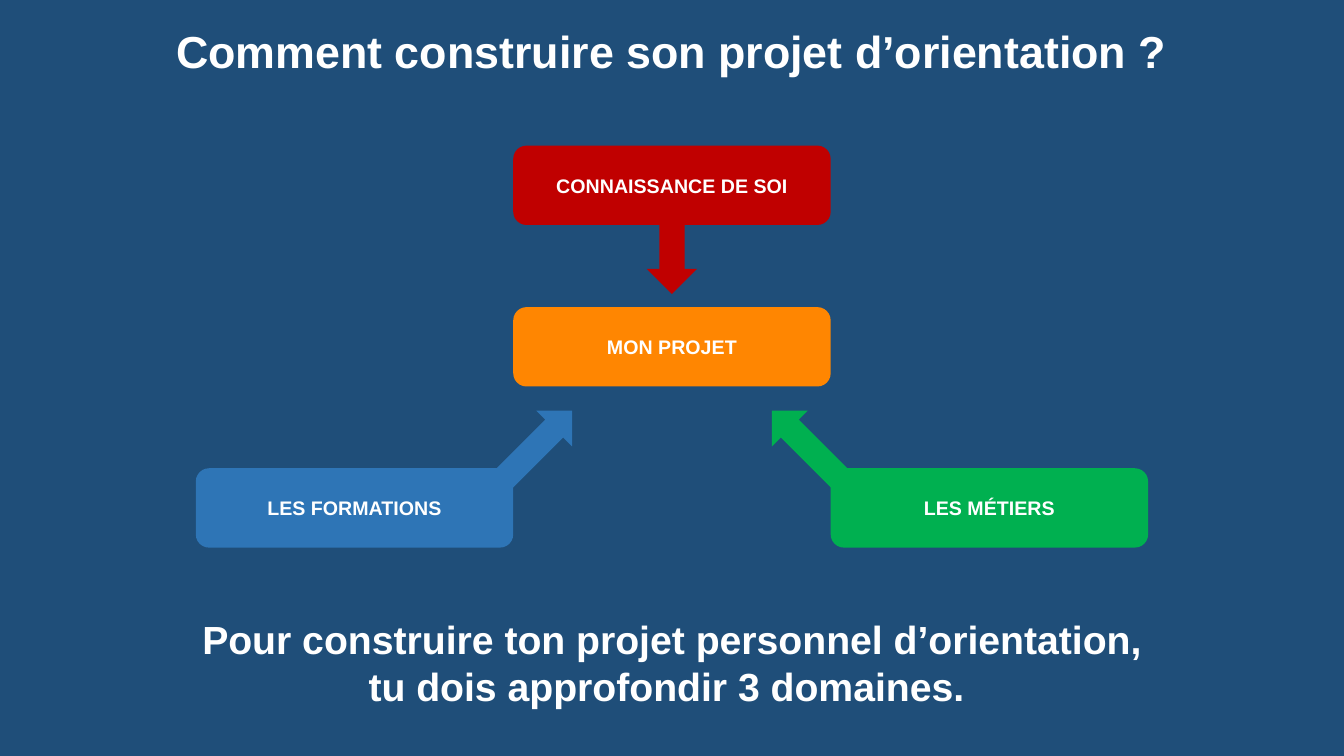
from dataclasses import dataclass

from pptx import Presentation
from pptx.dml.color import RGBColor as Rgb
from pptx.enum.shapes import MSO_SHAPE as Kind
from pptx.enum.text import MSO_ANCHOR as Anchor, MSO_AUTO_SIZE as Fit, PP_ALIGN as Align
from pptx.shapes.autoshape import Shape
from pptx.slide import Slide
from pptx.text.text import TextFrame
from pptx.util import Cm, Pt


@dataclass(frozen=True)
class Theme:
    font: str = "Arial"
    back: str = "1F4E79"
    text: str = "FFFFFF"
    red: str = "C00000"
    blue: str = "2E75B6"
    green: str = "00B050"
    gold: str = "FF8601"
    title: int = 32
    note: int = 28
    label: int = 14


@dataclass(frozen=True)
class Box:
    label: str
    mid: float
    top: float
    fill: str


@dataclass(frozen=True)
class Arrow:
    """A down arrow, placed by its centre and turned clockwise."""
    mid: float
    level: float
    length: float
    turn: int
    fill: str


@dataclass(frozen=True)
class Banner:
    lines: tuple[str, ...]
    top: float
    height: float
    size: int


THEME = Theme()
WIDTH, HEIGHT = 33.87, 19.05
MID = WIDTH / 2
BOX_W, BOX_H = 8, 2
ARROW_W = 1.27
SIDE = 3.47

ARROWS = (
    Arrow(MID + SIDE, 11.3, 2.69, 135, THEME.green),
    Arrow(MID - SIDE, 11.3, 2.69, 225, THEME.blue),
    Arrow(MID, 6.41, 2, 0, THEME.red),
)
BOXES = (
    Box("CONNAISSANCE DE SOI", MID, 3.67, THEME.red),
    Box("LES FORMATIONS", MID - BOX_W, 11.8, THEME.blue),
    Box("LES MÉTIERS", MID + BOX_W, 11.8, THEME.green),
    Box("MON PROJET", MID, 7.74, THEME.gold),
)
BANNERS = (
    Banner(("Comment construire son projet d’orientation ?",), 0.48, 1.62, THEME.title),
    Banner(("Pour construire ton projet personnel d’orientation,",
            "tu dois approfondir 3 domaines. "), 15.37, 2.65, THEME.note),
)


def write(frame: TextFrame, lines: tuple[str, ...], size: int) -> None:
    frame.word_wrap = True
    for index, line in enumerate(lines):
        para = frame.add_paragraph() if index else frame.paragraphs[0]
        para.alignment = Align.CENTER
        run = para.add_run()
        run.text = line
        run.font.name = THEME.font
        run.font.size = Pt(size)
        run.font.bold = True
        run.font.color.rgb = Rgb.from_string(THEME.text)


def add_flat(slide: Slide, kind: Kind, mid: float, top: float,
             width: float, height: float, fill: str) -> Shape:
    """Add a shape centred on mid, with no outline or shadow."""
    shape = slide.shapes.add_shape(
        kind, Cm(mid - width / 2), Cm(top), Cm(width), Cm(height))
    shape.shadow.inherit = False
    shape.fill.solid()
    shape.fill.fore_color.rgb = Rgb.from_string(fill)
    shape.line.fill.background()
    return shape


def add_arrow(slide: Slide, arrow: Arrow) -> None:
    top = arrow.level - arrow.length / 2
    shape = add_flat(slide, Kind.DOWN_ARROW, arrow.mid, top,
                     ARROW_W, arrow.length, arrow.fill)
    shape.rotation = arrow.turn


def add_box(slide: Slide, box: Box) -> None:
    shape = add_flat(slide, Kind.ROUNDED_RECTANGLE, box.mid, box.top,
                     BOX_W, BOX_H, box.fill)
    shape.text_frame.vertical_anchor = Anchor.MIDDLE
    write(shape.text_frame, (box.label,), THEME.label)


def add_banner(slide: Slide, banner: Banner) -> None:
    frame = slide.shapes.add_textbox(
        0, Cm(banner.top), Cm(WIDTH), Cm(banner.height)).text_frame
    write(frame, banner.lines, banner.size)
    frame.auto_size = Fit.SHAPE_TO_FIT_TEXT


def main() -> None:
    deck = Presentation()
    deck.slide_width, deck.slide_height = Cm(WIDTH), Cm(HEIGHT)
    slide = deck.slides.add_slide(deck.slide_layouts[6])
    slide.background.fill.solid()
    slide.background.fill.fore_color.rgb = Rgb.from_string(THEME.back)
    for arrow in ARROWS:
        add_arrow(slide, arrow)
    for box in BOXES:
        add_box(slide, box)
    for banner in BANNERS:
        add_banner(slide, banner)
    deck.save("out.pptx")


if __name__ == "__main__":
    main()
